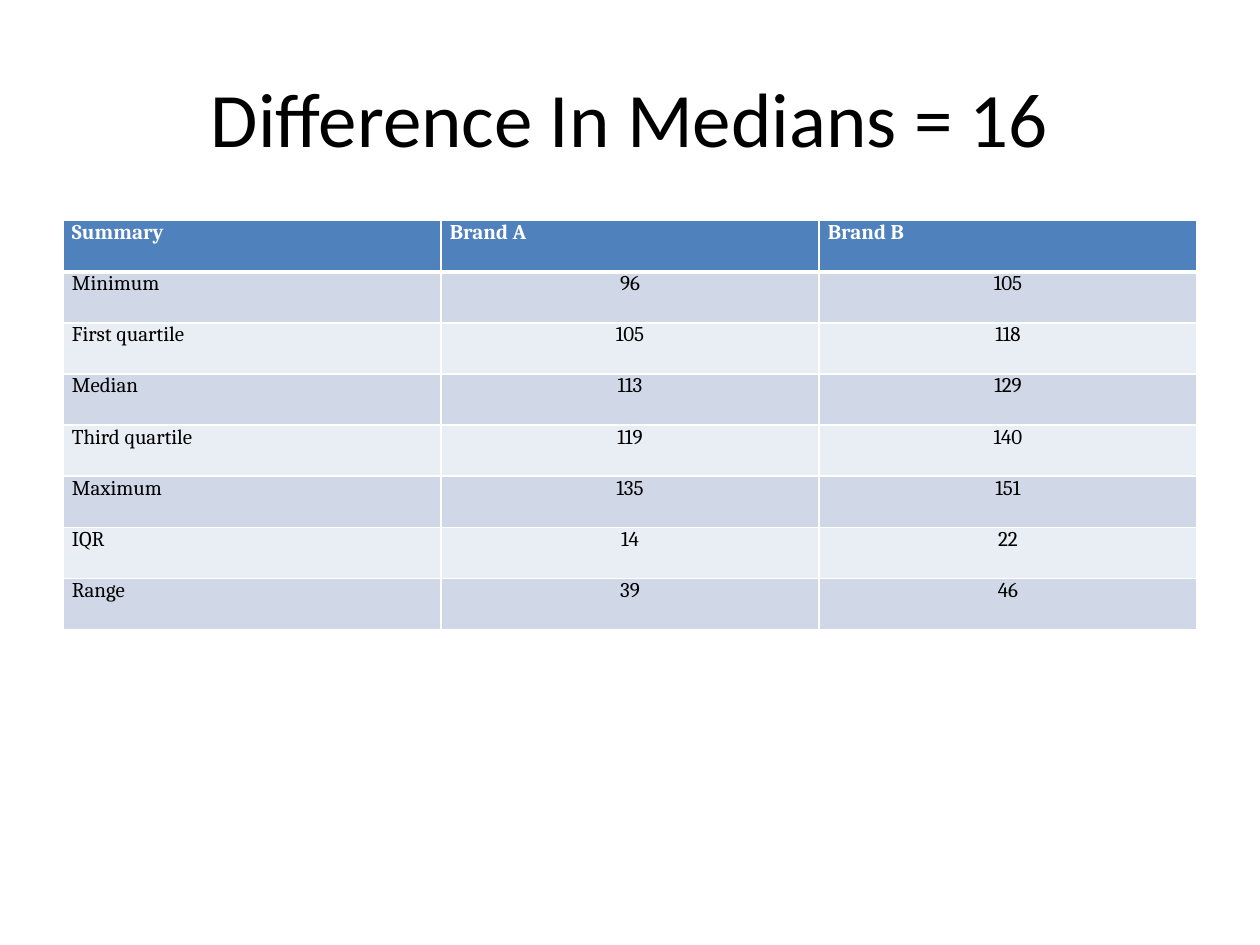
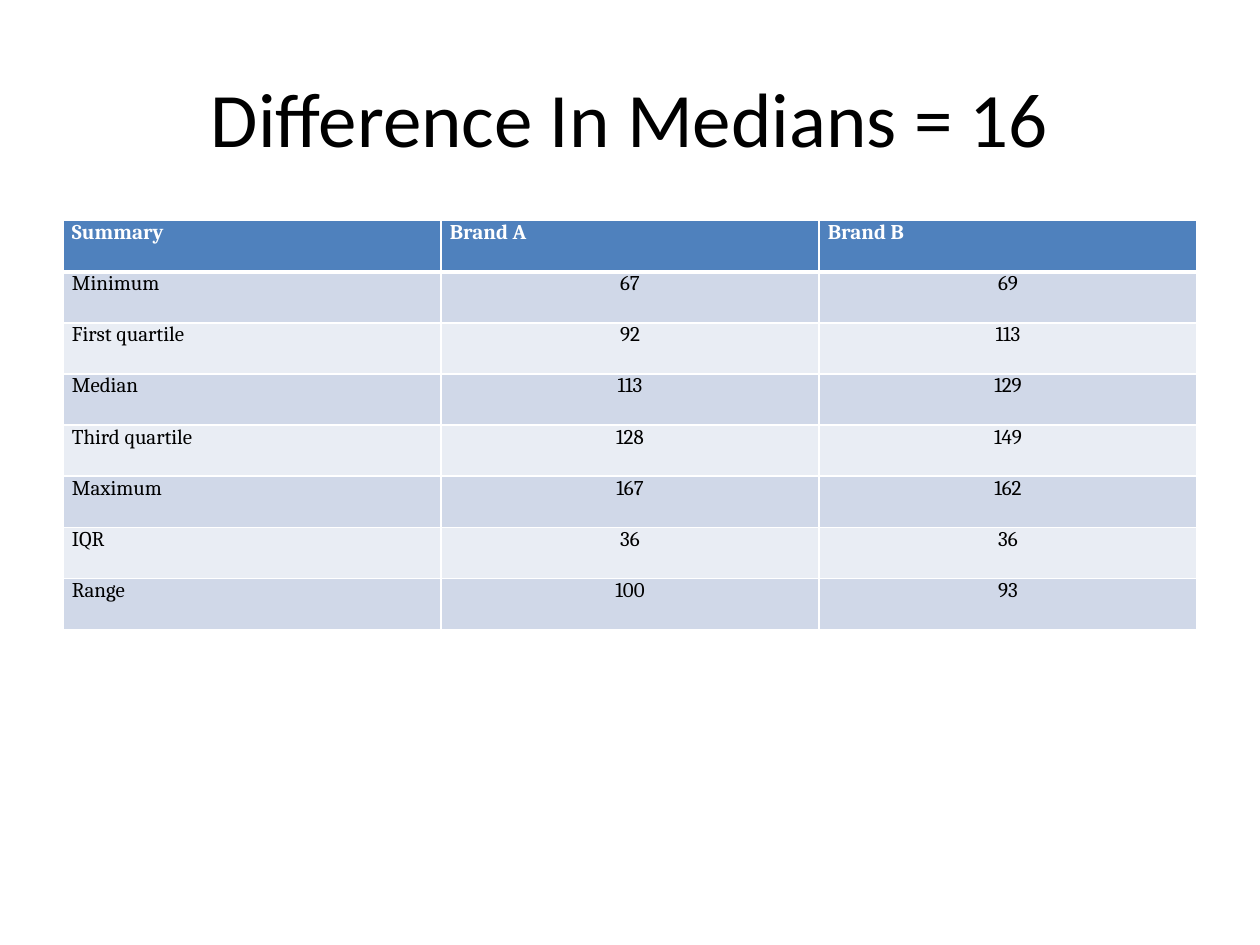
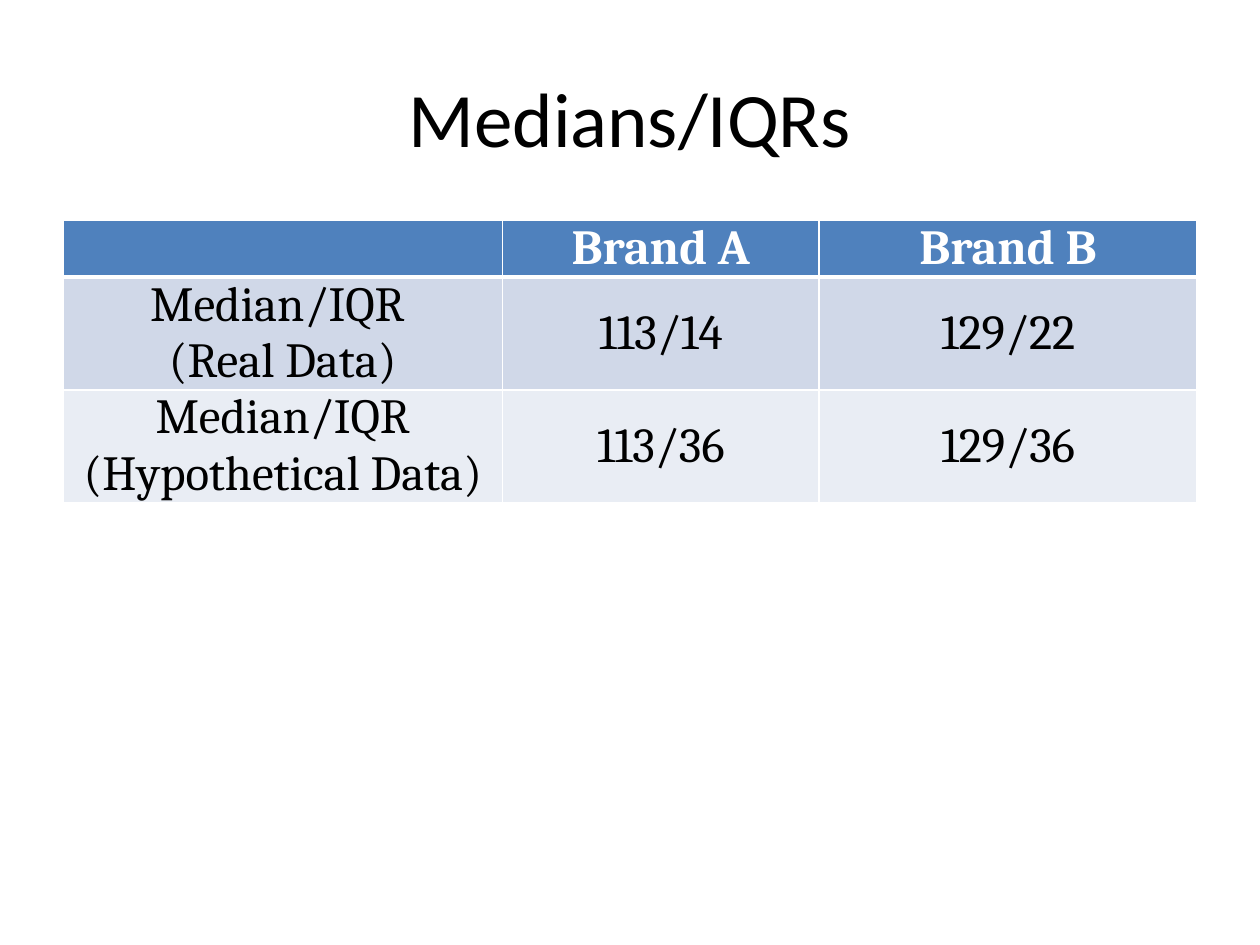
from lxml import etree
from pptx import Presentation
from pptx.dml.color import RGBColor
from pptx.enum.text import MSO_ANCHOR as Anchor, PP_ALIGN as Align
from pptx.oxml.ns import qn
from pptx.util import Cm, Pt

COLORS = {
    "title": "000000",
    "header": "4F81BD",
    "header_text": "FFFFFF",
    "band_dark": "D0D8E8",
    "band_light": "E9EDF4",
    "body_text": "000000",
    "grid": "FFFFFF",
}
TITLE_FONT, TABLE_FONT = "Calibri", "Cambria"
LEFT, CONTENT_WIDTH = Cm(1.27), Cm(22.86)
TITLE_TOP, TITLE_HEIGHT = Cm(0.76), Cm(3.18)
TABLE_TOP, ROW_HEIGHT = Cm(4.45), Cm(1.03)
CELL_PADDING = Cm(0.18)
GRID_WIDTH, HEADER_RULE_WIDTH = Pt(1), Pt(3)

BRANDS = ["Brand A", "Brand B"]
MEASURES = ["Minimum", "First quartile", "Median", "Third quartile",
            "Maximum", "IQR", "Range"]
REAL_DATA = [(96, 105), (105, 118), (113, 129), (119, 140),
             (135, 151), (14, 22), (39, 46)]
HYPOTHETICAL_DATA = [(67, 69), (92, 113), (113, 129), (128, 149),
                     (167, 162), (36, 36), (100, 93)]


def rgb(key):
    return RGBColor.from_string(COLORS[key])


def format_runs(paragraph, font_name, size, color, bold=False):
    for run in paragraph.runs:
        run.font.name = font_name
        run.font.size = Pt(size)
        run.font.bold = bold
        run.font.color.rgb = rgb(color)


def add_titled_slide(prs, heading):
    slide = prs.slides.add_slide(prs.slide_layouts[5])
    title = slide.shapes.title
    title.left, title.top = LEFT, TITLE_TOP
    title.width, title.height = CONTENT_WIDTH, TITLE_HEIGHT
    title.text_frame.text = heading
    title.text_frame.vertical_anchor = Anchor.MIDDLE
    paragraph = title.text_frame.paragraphs[0]
    paragraph.alignment = Align.CENTER
    format_runs(paragraph, TITLE_FONT, 44, "title")
    return slide


def set_borders(cell, row):
    """Draw thin grid lines, with a thick rule below the header row."""
    widths = {
        "lnL": GRID_WIDTH,
        "lnR": GRID_WIDTH,
        "lnT": HEADER_RULE_WIDTH if row == 1 else GRID_WIDTH,
        "lnB": HEADER_RULE_WIDTH if row == 0 else GRID_WIDTH,
    }
    properties = cell._tc.get_or_add_tcPr()
    for side, width in widths.items():
        line = etree.SubElement(properties, qn(f"a:{side}"), w=str(width))
        fill = etree.SubElement(line, qn("a:solidFill"))
        etree.SubElement(fill, qn("a:srgbClr"), val=COLORS["grid"])


def fill_cell(cell, row, text, size, alignment, anchor):
    is_header = row == 0
    set_borders(cell, row)
    cell.fill.solid()
    band = "band_dark" if row % 2 else "band_light"
    cell.fill.fore_color.rgb = rgb("header" if is_header else band)
    cell.margin_left = cell.margin_right = CELL_PADDING
    cell.margin_top = cell.margin_bottom = 0
    cell.vertical_anchor = anchor
    cell.text_frame.text = text
    for paragraph in cell.text_frame.paragraphs:
        paragraph.alignment = alignment
        format_runs(paragraph, TABLE_FONT, size,
                    "header_text" if is_header else "body_text", is_header)


def add_brand_table(slide, rows, column_widths, size, label_align, header_align,
                    value_anchor):
    table = slide.shapes.add_table(len(rows), len(column_widths), LEFT, TABLE_TOP,
                                   CONTENT_WIDTH, ROW_HEIGHT * len(rows)).table
    for column, width in zip(table.columns, column_widths):
        column.width = Cm(width)
    for r, texts in enumerate(rows):
        table.rows[r].height = ROW_HEIGHT
        for c, text in enumerate(texts):
            if c == 0:
                alignment = label_align
            else:
                alignment = header_align if r == 0 else Align.CENTER
            anchor = value_anchor if r and c else Anchor.TOP
            fill_cell(table.cell(r, c), r, str(text), size, alignment, anchor)


def add_summary_slide(prs, values):
    """Five-number summary with spread, one column per brand."""
    slide = add_titled_slide(prs, "Difference In Medians = 16")
    rows = [["Summary", *BRANDS]]
    rows += [[measure, *pair] for measure, pair in zip(MEASURES, values)]
    add_brand_table(slide, rows, [7.62] * 3, 12, Align.LEFT, Align.LEFT, Anchor.TOP)


def add_comparison_slide(prs):
    """Median against IQR for both data sets."""
    slide = add_titled_slide(prs, "Medians/IQRs")
    rows = [
        ["", *BRANDS],
        ["Median/IQR \n(Real Data)", "113/14", "129/22"],
        ["Median/IQR (Hypothetical Data)", "113/36", "129/36"],
    ]
    add_brand_table(slide, rows, [8.86, 6.38, 7.62], 28, Align.CENTER, Align.CENTER,
                    Anchor.MIDDLE)


def main():
    prs = Presentation()
    prs.slide_width, prs.slide_height = Cm(25.4), Cm(19.05)
    for values in (REAL_DATA, HYPOTHETICAL_DATA):
        add_summary_slide(prs, values)
    add_comparison_slide(prs)
    prs.save("out.pptx")


if __name__ == "__main__":
    main()
